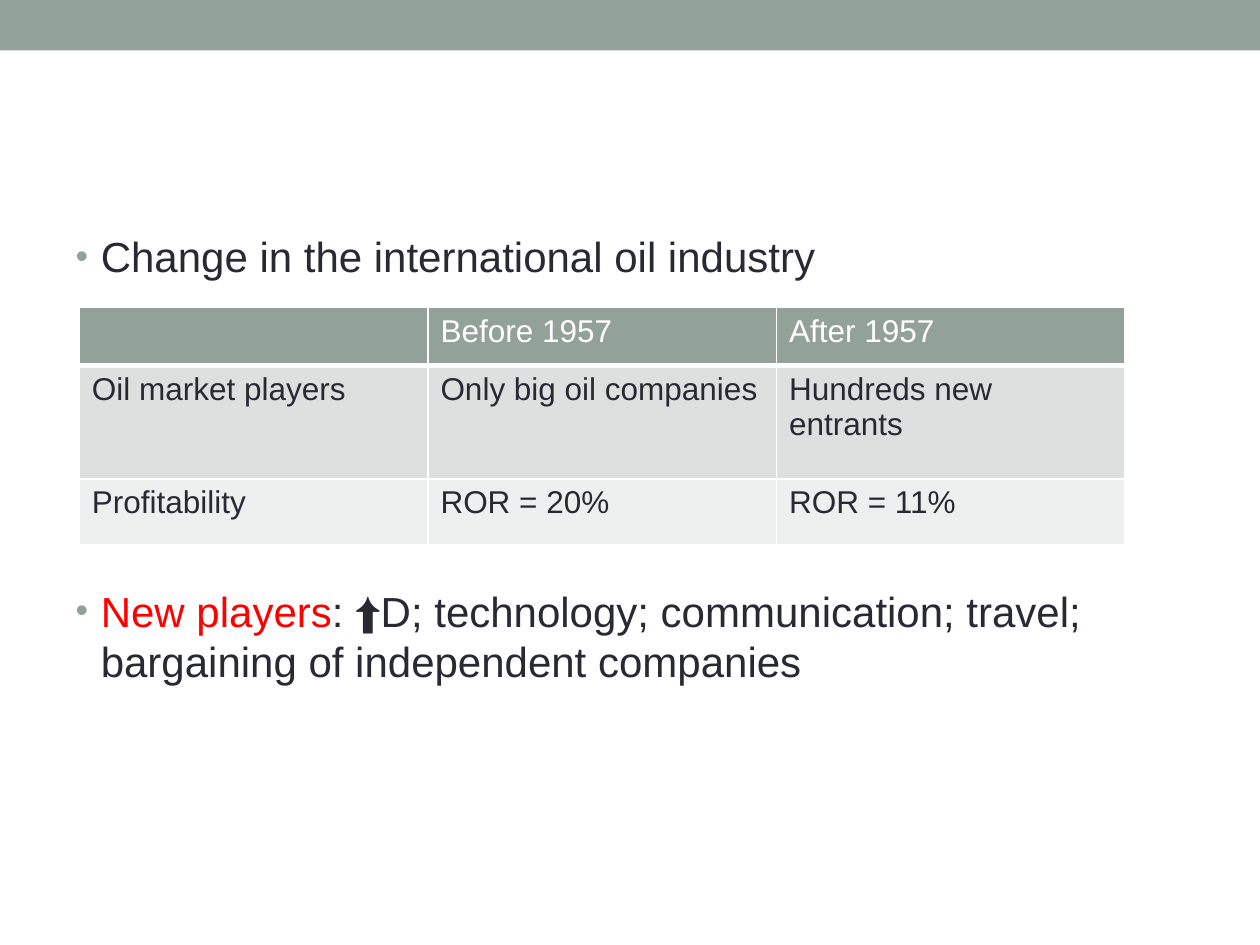
from lxml.etree import SubElement
from pptx import Presentation
from pptx.dml.color import RGBColor
from pptx.enum.shapes import MSO_SHAPE as Shape
from pptx.enum.text import MSO_AUTO_SIZE as AutoSize
from pptx.oxml import parse_xml
from pptx.oxml.ns import nsdecls, qn
from pptx.util import Inches, Pt

SAGE = RGBColor(0x93, 0xA2, 0x99)
INK = RGBColor(0x29, 0x29, 0x34)
RED = RGBColor(0xFF, 0x00, 0x00)
WHITE = RGBColor(0xFF, 0xFF, 0xFF)
BAND_DARK = RGBColor(0xDC, 0xE0, 0xDE)
BAND_LIGHT = RGBColor(0xEE, 0xF0, 0xEF)
FONT = "Arial"

BULLETS = [
    (0, [("Change in the international oil industry", INK)]),
    (174, [("New players", RED),
           (": ⬆D; technology; communication; travel; "
            "bargaining of independent companies", INK)]),
]
ROWS = [
    (0.46, SAGE, WHITE, ["", "Before 1957", "After 1957"]),
    (0.9, BAND_DARK, INK,
     ["Oil market players", "Only big oil companies", "Hundreds new entrants"]),
    (0.52, BAND_LIGHT, INK, ["Profitability", "ROR = 20%", "ROR = 11%"]),
]


def add_run(p, text, size, color):
    r = p.add_run()
    r.text = text
    r.font.name = FONT
    r.font.size = Pt(size)
    r.font.color.rgb = color


def add_bullet(p):
    pPr = p._p.get_or_add_pPr()
    pPr.set("marL", str(Inches(0.2)))
    pPr.set("indent", str(-Inches(0.2)))
    color = SubElement(pPr, qn("a:buClr"))
    SubElement(color, qn("a:srgbClr"), val=str(SAGE))
    SubElement(pPr, qn("a:buSzPct"), val="85000")
    SubElement(pPr, qn("a:buFont"), typeface=FONT)
    SubElement(pPr, qn("a:buChar"), char="•")


def set_borders(cell, widths):
    tcPr = cell._tc.get_or_add_tcPr()
    for i, (side, width) in enumerate(widths.items()):
        tcPr.insert(i, parse_xml(
            f'<a:ln{side} {nsdecls("a")} w="{Pt(width)}"><a:solidFill>'
            f'<a:srgbClr val="{WHITE}"/></a:solidFill></a:ln{side}>'))


prs = Presentation()
prs.slide_width, prs.slide_height = Inches(10), Inches(7.5)
s = prs.slides.add_slide(prs.slide_layouts[1])
title, body = s.placeholders
title._element.getparent().remove(title._element)

bar = s.shapes.add_shape(Shape.RECTANGLE, 0, 0, prs.slide_width, Inches(0.4))
bar.shadow.inherit = False
bar.fill.solid()
bar.fill.fore_color.rgb = SAGE
bar.line.fill.background()

body.left, body.top = Inches(0.5), Inches(1.75)
body.width, body.height = Inches(9), Inches(5.33)
tf = body.text_frame
tf.auto_size = AutoSize.NONE
tf.margin_top = Inches(0.08)
for i, (gap, runs) in enumerate(BULLETS):
    p = tf.add_paragraph() if i else tf.paragraphs[0]
    add_bullet(p)
    p.space_before = Pt(gap)
    for text, color in runs:
        add_run(p, text, 24, color)

columns = len(ROWS[0][3])
height = sum(row[0] for row in ROWS)
table = s.shapes.add_table(len(ROWS), columns, Inches(0.63), Inches(2.44),
                           Inches(8.3), Inches(height)).table
for i, (row_height, fill, color, texts) in enumerate(ROWS):
    table.rows[i].height = Inches(row_height)
    for j, text in enumerate(texts):
        cell = table.cell(i, j)
        cell.fill.solid()
        cell.fill.fore_color.rgb = fill
        set_borders(cell, {"L": 1, "R": 1, "T": 3 if i == 1 else 1,
                           "B": 1 if i else 3})
        if text:
            add_run(cell.text_frame.paragraphs[0], text, 18, color)

prs.save("out.pptx")
